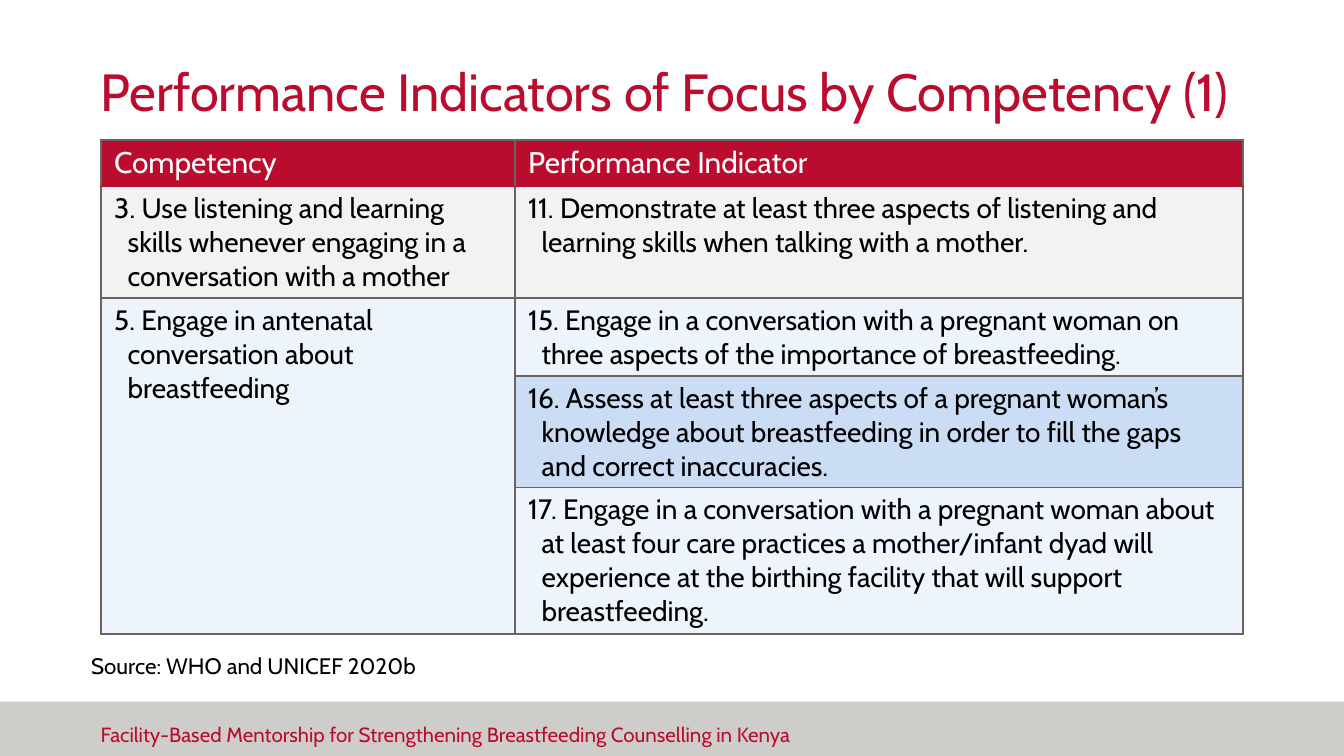
from lxml.etree import SubElement
from pptx import Presentation
from pptx.dml.color import RGBColor
from pptx.enum.shapes import MSO_SHAPE as Shape
from pptx.enum.text import MSO_ANCHOR as Anchor, PP_ALIGN as Align
from pptx.oxml.ns import qn
from pptx.util import Inches, Pt

COLORS = {
    "red": "BA0C2F", "band": "CFCDC9", "border": "6C6463",
    "white": "FFFFFF", "black": "000000",
    "gray": "F2F2F2", "pale": "EDF4FB", "blue": "CADDF4",
}


def rgb(name):
    return RGBColor.from_string(COLORS[name])


def write(frame, text, size, color, margins=(0.1, 0.05, 0.1, 0.05),
          anchor=Anchor.TOP, hang=0):
    frame.word_wrap = True
    frame.vertical_anchor = anchor
    (frame.margin_left, frame.margin_top,
     frame.margin_right, frame.margin_bottom) = map(Inches, margins)
    frame.text = text
    line = frame.paragraphs[0]
    line.alignment = Align.LEFT
    if hang:
        props = line._p.get_or_add_pPr()
        props.set("marL", str(Inches(hang)))
        props.set("indent", str(-Inches(hang)))
    font = line.runs[0].font
    font.name, font.size, font.bold = "Cabin", Pt(size), False
    font.color.rgb = rgb(color)


# 16:9 slide
deck = Presentation()
deck.slide_width = W = Inches(10)
deck.slide_height = H = W * 9 // 16
MARGIN = int(W * 0.075)
CONTENT = W - 2 * MARGIN
slide = deck.slides.add_slide(deck.slide_layouts[5])
shapes = slide.shapes

# Footer band and its text
band_top = Inches(5.22)
band = shapes.add_shape(Shape.RECTANGLE, 0, band_top, W, H - band_top)
band.shadow.inherit = False
band.fill.solid()
band.fill.fore_color.rgb = rgb("band")
band.line.fill.background()
footer = shapes.add_textbox(MARGIN, Inches(5.32), Inches(5.26), Inches(0.47))
write(footer.text_frame,
      "Facility-Based Mentorship for Strengthening Breastfeeding Counselling in Kenya",
      11, "red", margins=(0, 0.05, 0.1, 0.05))

# Title
title = shapes.title
title.left, title.top = MARGIN, Inches(0.16)
title.width, title.height = CONTENT, Inches(0.75)
write(title.text_frame, "Performance Indicators of Focus by Competency (1)",
      28, "red", margins=(0, 0, 0, 0), anchor=Anchor.BOTTOM)

# Competency table: row height, fill, competency, indicator
rows = [
    (0.34, "red", "Competency", "Performance Indicator"),
    (0.83, "gray",
     "3. Use listening and learning skills whenever engaging in a conversation with a mother",
     "11. Demonstrate at least three aspects of listening and learning skills when talking "
     "with a mother."),
    (0.58, "pale",
     "5. Engage in antenatal conversation about breastfeeding",
     "15. Engage in a conversation with a pregnant woman on three aspects of the importance "
     "of breastfeeding."),
    (0.83, "blue", "",
     "16. Assess at least three aspects of a pregnant woman’s knowledge about breastfeeding "
     "in order to fill the gaps and correct inaccuracies."),
    (1.09, "pale", "",
     "17. Engage in a conversation with a pregnant woman about at least four care practices "
     "a mother/infant dyad will experience at the birthing facility that will support "
     "breastfeeding."),
]
table_height = Inches(sum(row[0] for row in rows))
table = shapes.add_table(len(rows), 2, MARGIN, Inches(1.04), CONTENT, table_height).table
table.columns[0].width = Inches(3.08)
table.columns[1].width = CONTENT - Inches(3.08)
table.cell(2, 0).merge(table.cell(4, 0))

for r, (height, fill, *texts) in enumerate(rows):
    table.rows[r].height = Inches(height)
    is_header = r == 0
    for c, text in enumerate(texts):
        cell = table.cell(r, c)
        # Borders precede the fill; the line under the header blends into it
        cell_props = cell._tc.get_or_add_tcPr()
        for side in ("lnL", "lnR", "lnT", "lnB"):
            under_header = (r, side) in ((0, "lnB"), (1, "lnT"))
            edge = SubElement(cell_props, qn("a:" + side), w=str(Pt(1)))
            edge_fill = SubElement(edge, qn("a:solidFill"))
            SubElement(edge_fill, qn("a:srgbClr"),
                       val=COLORS["red" if under_header else "border"])
        cell.fill.solid()
        cell.fill.fore_color.rgb = rgb(fill)
        cell.margin_left = cell.margin_right = Inches(0.1)
        cell.margin_top = cell.margin_bottom = Inches(0.04)
        if text:
            write(cell.text_frame, text, 16 if is_header else 15,
                  "white" if is_header else "black",
                  margins=(0.1, 0.04, 0.1, 0.04), hang=0 if is_header else 0.1)

# Source line
source = shapes.add_textbox(Inches(0.58), Inches(4.8), Inches(6.94), Inches(0.3))
write(source.text_frame, "Source: WHO and UNICEF 2020b", 12, "black")

deck.save("out.pptx")
